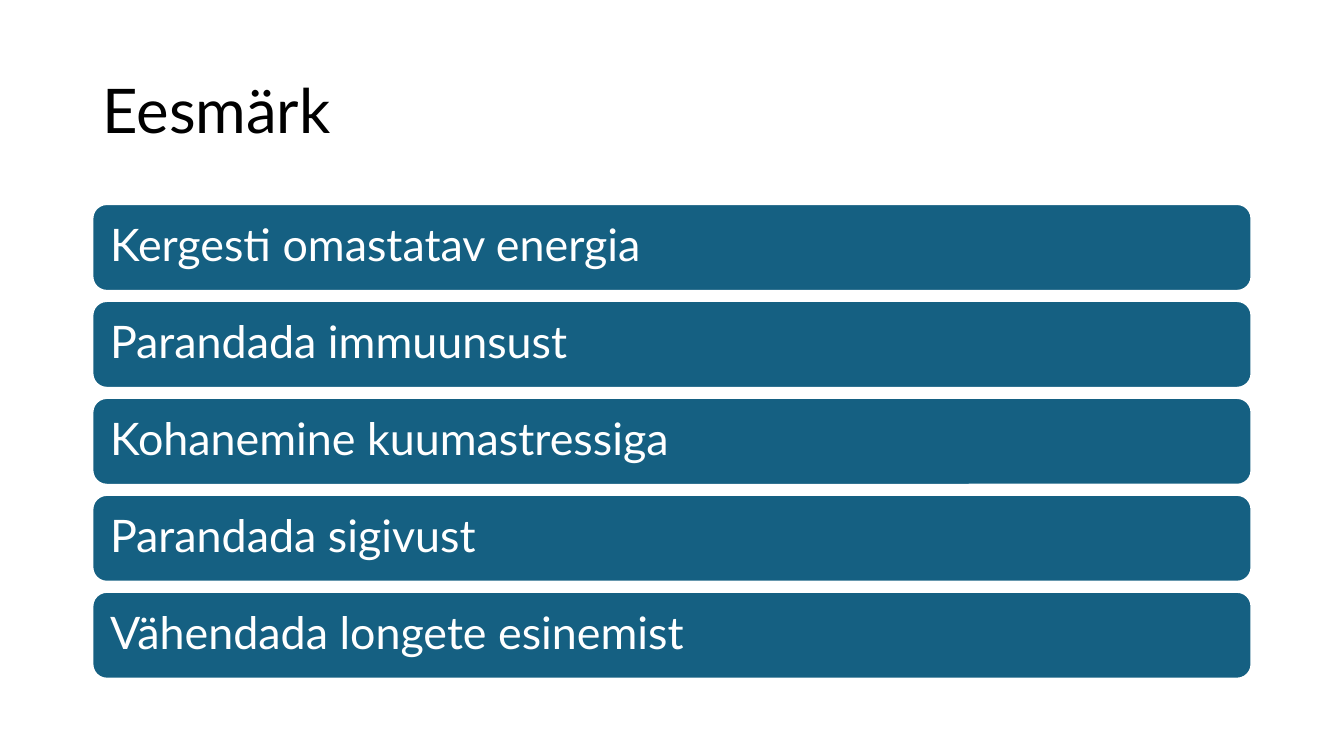
from dataclasses import dataclass

from pptx import Presentation
from pptx.dml.color import RGBColor
from pptx.enum.shapes import MSO_SHAPE
from pptx.enum.text import MSO_ANCHOR, PP_ALIGN
from pptx.slide import Slide
from pptx.text.text import TextFrame
from pptx.util import Pt

BLACK = RGBColor(0x00, 0x00, 0x00)
WHITE = RGBColor(0xFF, 0xFF, 0xFF)
TEAL = RGBColor(0x15, 0x60, 0x82)
FONT = "Lato"
LEFT, WIDTH = 66, 828
TOP, STEP, HEIGHT = 145.7, 69.25, 62.1
INSET = 9.6
GOALS = [
    "Kergesti omastatav energia",
    "Parandada immuunsust",
    "Kohanemine kuumastressiga",
    "Parandada sigivust",
    "Vähendada longete esinemist",
]


@dataclass
class Bar:
    text: str
    top: float


def write(frame: TextFrame, text: str, size: float, color: RGBColor) -> None:
    frame.text = text
    frame.word_wrap = True
    frame.vertical_anchor = MSO_ANCHOR.MIDDLE
    line = frame.paragraphs[0]
    line.alignment = PP_ALIGN.LEFT
    line.line_spacing = 0.9
    font = line.runs[0].font
    font.name = FONT
    font.size = Pt(size)
    font.color.rgb = color


def draw(slide: Slide, bar: Bar) -> None:
    shape = slide.shapes.add_shape(
        MSO_SHAPE.ROUNDED_RECTANGLE, Pt(LEFT), Pt(bar.top), Pt(WIDTH), Pt(HEIGHT)
    )
    shape.shadow.inherit = False
    shape.fill.solid()
    shape.fill.fore_color.rgb = TEAL
    shape.line.color.rgb = WHITE
    shape.line.width = Pt(1.5)
    frame = shape.text_frame
    frame.margin_left = frame.margin_right = Pt(INSET)
    frame.margin_top = frame.margin_bottom = Pt(INSET)
    write(frame, bar.text, 32, WHITE)


def main() -> None:
    deck = Presentation()
    deck.slide_width, deck.slide_height = Pt(960), Pt(540)
    slide = deck.slides.add_slide(deck.slide_layouts[5])
    title = slide.shapes.title
    title.left, title.top = Pt(LEFT), Pt(28.75)
    title.width, title.height = Pt(WIDTH), Pt(104.4)
    write(title.text_frame, "Eesmärk", 44, BLACK)
    for i, goal in enumerate(GOALS):
        draw(slide, Bar(goal, TOP + i * STEP))
    deck.save("out.pptx")


if __name__ == "__main__":
    main()
